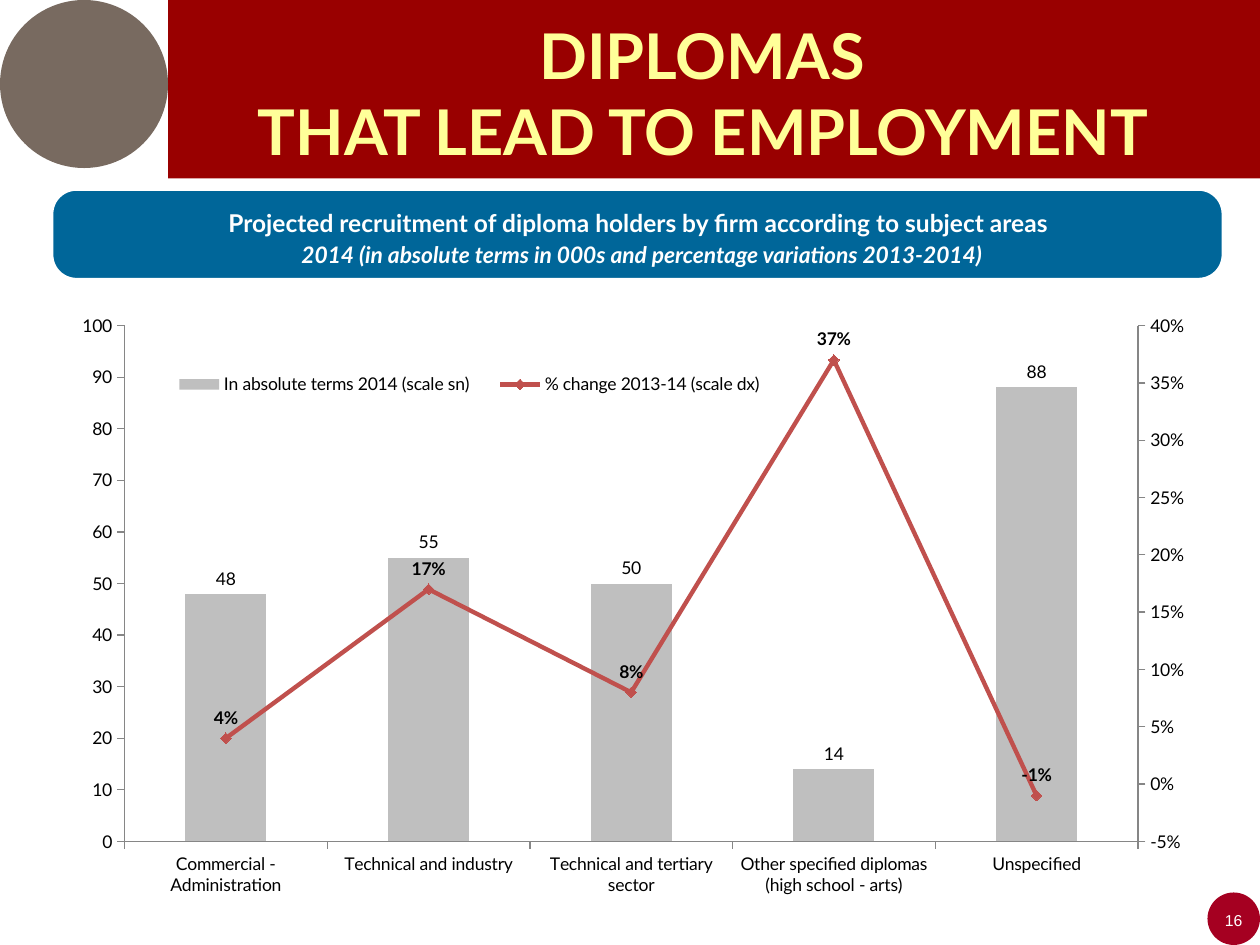
from copy import deepcopy

from pptx import Presentation
from pptx.chart.data import CategoryChartData
from pptx.dml.color import RGBColor
from pptx.enum.chart import XL_CHART_TYPE as ChartType
from pptx.enum.chart import XL_LABEL_POSITION as LabelPosition
from pptx.enum.chart import XL_LEGEND_POSITION as LegendPosition
from pptx.enum.chart import XL_MARKER_STYLE as MarkerStyle
from pptx.enum.chart import XL_TICK_MARK as TickMark
from pptx.enum.shapes import MSO_SHAPE as Shape
from pptx.enum.text import MSO_ANCHOR as Anchor
from pptx.enum.text import MSO_AUTO_SIZE as AutoSize
from pptx.enum.text import PP_ALIGN as Align
from pptx.oxml import parse_xml
from pptx.oxml.ns import nsdecls
from pptx.util import Pt

FONT = "Lato"
GREY, RED, AXIS = "BFBFBF", "C0504D", "868686"

LINE_PLOT = """<c:lineChart {ns}><c:grouping val="standard"/><c:varyColors val="0"/>
<c:marker val="1"/><c:axId val="5001"/><c:axId val="5002"/></c:lineChart>"""

HIDDEN_AXIS = """<c:catAx {ns}><c:axId val="5001"/>
<c:scaling><c:orientation val="minMax"/></c:scaling><c:delete val="1"/>
<c:axPos val="b"/><c:crossAx val="5002"/><c:crosses val="autoZero"/></c:catAx>"""

RIGHT_AXIS = """<c:valAx {ns}><c:axId val="5002"/>
<c:scaling><c:orientation val="minMax"/><c:max val="0.4"/><c:min val="-0.05"/></c:scaling>
<c:delete val="0"/><c:axPos val="r"/><c:numFmt formatCode="0%" sourceLinked="0"/>
<c:majorTickMark val="out"/><c:minorTickMark val="none"/><c:tickLblPos val="nextTo"/>
<c:spPr><a:ln w="9525"><a:solidFill><a:srgbClr val="{color}"/></a:solidFill></a:ln></c:spPr>
<c:crossAx val="5001"/><c:crosses val="max"/><c:crossBetween val="between"/>
<c:majorUnit val="0.05"/></c:valAx>"""

LAYOUT = """<c:layout {ns}><c:manualLayout>{target}<c:xMode val="edge"/><c:yMode val="edge"/>
<c:x val="{x}"/><c:y val="{y}"/><c:w val="{w}"/><c:h val="{h}"/></c:manualLayout></c:layout>"""


def rgb(value):
    return RGBColor.from_string(value)


def chart_xml(template, **values):
    return parse_xml(template.format(ns=nsdecls("c", "a"), **values))


def place(item, left, top, width, height):
    item.left, item.top = Pt(left), Pt(top)
    item.width, item.height = Pt(width), Pt(height)


def format_font(font, size, color="000000", name=FONT, bold=False, italic=False):
    font.size, font.name = Pt(size), name
    font.bold, font.italic = bold, italic
    font.color.rgb = rgb(color)


def write(para, text, spacing=None, after=None, **style):
    para.text = text
    para.alignment = Align.CENTER
    para.line_spacing = spacing
    if after is not None:
        para.space_after = Pt(after)
    for span in para.runs:
        format_font(span.font, **style)


def set_frame(box, side=0, vertical=0):
    frame = box.text_frame
    frame.word_wrap = True
    frame.vertical_anchor = Anchor.MIDDLE
    frame.margin_left = frame.margin_right = Pt(side)
    frame.margin_top = frame.margin_bottom = Pt(vertical)
    return frame


def add_block(shapes, kind, bounds, fill, line=None):
    block = shapes.add_shape(kind, *map(Pt, bounds))
    block.shadow.inherit = False
    block.fill.solid()
    block.fill.fore_color.rgb = rgb(fill)
    if line:
        block.line.color.rgb = rgb(line)
        block.line.width = Pt(2)
    else:
        block.line.fill.background()
    return block


def add_title(page):
    title = page.shapes.title
    place(title, 98, 5.8, 615, 93.6)
    frame = set_frame(title, 6.5, 3.6)
    frame.auto_size = AutoSize.SHAPE_TO_FIT_TEXT
    para = frame.paragraphs[0]
    write(para, "DIPLOMAS \vTHAT LEAD TO EMPLOYMENT ", size=36, color="FFFF99", bold=True)
    line_break = para._p.xpath("a:br")[0]
    line_break.append(deepcopy(para.runs[0].font._element))


def add_banner(page):
    group = page.shapes.add_group_shape()
    plate = add_block(group.shapes, Shape.ROUNDED_RECTANGLE, (29.5, 108, 669.6, 51.8), "006699", "FFFFFF")
    plate.adjustments[0] = 0.275
    box = group.shapes.add_textbox(*map(Pt, (32.4, 105.8, 668.2, 62.6)))
    frame = set_frame(box, 2.9, 12.2)
    style = dict(spacing=0.9, after=3, color="FFFFFF", bold=True)
    write(frame.paragraphs[0],
          "Projected recruitment of diploma holders by firm according to subject areas ", size=14, **style)
    write(frame.add_paragraph(),
          "2014 (in absolute terms in 000s and percentage variations 2013-2014)", size=13, italic=True, **style)


def add_page_number(page):
    add_block(page.shapes, Shape.OVAL, (690, 510, 30, 30), "A50021")
    box = page.shapes.add_textbox(*map(Pt, (690, 512, 30, 28)))
    write(set_frame(box).paragraphs[0], "16", size=9, color="FFFFFF", name="Arial")


def format_axis(axis):
    axis.has_major_gridlines = False
    axis.major_tick_mark = TickMark.OUTSIDE
    axis.format.line.color.rgb = rgb(AXIS)
    axis.format.line.width = Pt(0.75)


def add_labels(series, position, number_format, bold=False):
    labels = series.data_labels
    labels.show_value = True
    labels.position = position
    labels.number_format = number_format
    labels.number_format_is_linked = False
    format_font(labels.font, 10, bold=bold)


def move_to_right_axis(chart):
    plot_area = chart.element.xpath(".//c:plotArea")[0]
    bars = plot_area.xpath("c:barChart")[0]
    change = bars.xpath("c:ser")[1]
    for flag in change.xpath("c:invertIfNegative"):
        change.remove(flag)
    line_plot = chart_xml(LINE_PLOT)
    line_plot.insert(2, change)
    bars.addnext(line_plot)
    last_axis = plot_area.xpath("c:valAx")[0]
    last_axis.addnext(chart_xml(HIDDEN_AXIS))
    plot_area.xpath("c:catAx")[-1].addnext(chart_xml(RIGHT_AXIS, color=AXIS))


def set_layouts(chart):
    plot_area = chart.element.xpath(".//c:plotArea")[0]
    for old in plot_area.xpath("c:layout"):
        plot_area.remove(old)
    inner = '<c:layoutTarget val="inner"/>'
    plot_area.insert(0, chart_xml(LAYOUT, target=inner, x=0.075, y=0.051, w=0.852, h=0.824))
    legend = chart.element.xpath(".//c:legend")[0]
    for old in legend.xpath("c:layout"):
        legend.remove(old)
    legend.xpath("c:legendPos")[0].addnext(chart_xml(LAYOUT, target="", x=0.1, y=0.12, w=0.53, h=0.05))


def add_diploma_chart(page):
    data = CategoryChartData()
    data.categories = ["Commercial - Administration", "Technical and industry",
                       "Technical and tertiary sector",
                       "Other specified diplomas (high school - arts)", "Unspecified"]
    data.add_series("In absolute terms 2014 (scale sn)", (48, 55, 50, 14, 88))
    data.add_series("% change 2013-14 (scale dx)", (0.04, 0.17, 0.08, 0.37, -0.01), "0%")
    bounds = map(Pt, (20.2, 167.8, 679.7, 357.8))
    chart = page.shapes.add_chart(ChartType.COLUMN_CLUSTERED, *bounds, data).chart
    chart.has_title = False
    format_font(chart.font, 10)
    chart.has_legend = True
    chart.legend.position = LegendPosition.RIGHT
    chart.legend.include_in_layout = False
    format_axis(chart.category_axis)
    format_axis(chart.value_axis)
    chart.value_axis.minimum_scale, chart.value_axis.maximum_scale = 0, 100
    chart.value_axis.major_unit = 10
    move_to_right_axis(chart)
    set_layouts(chart)

    bar_plot, line_plot = chart.plots
    bar_plot.gap_width = 150
    bar_plot.vary_by_categories = False
    totals, change = bar_plot.series[0], line_plot.series[0]
    totals.format.fill.solid()
    totals.format.fill.fore_color.rgb = rgb(GREY)
    add_labels(totals, LabelPosition.OUTSIDE_END, "#,##0")
    change.smooth = False
    change.format.line.color.rgb = rgb(RED)
    change.format.line.width = Pt(2.5)
    change.marker.style = MarkerStyle.DIAMOND
    change.marker.size = 6
    change.marker.format.fill.solid()
    change.marker.format.fill.fore_color.rgb = rgb(RED)
    change.marker.format.line.color.rgb = rgb(RED)
    add_labels(change, LabelPosition.ABOVE, "0%", bold=True)


def main():
    deck = Presentation()
    deck.slide_width, deck.slide_height = Pt(720), Pt(540)
    page = deck.slides.add_slide(deck.slide_layouts[5])
    header = add_block(page.shapes, Shape.RECTANGLE, (96, 0, 624, 102), "990000")
    page.shapes.title._element.addprevious(header._element)
    add_block(page.shapes, Shape.OVAL, (0, 0, 96, 96), "786A60")
    add_page_number(page)
    add_title(page)
    add_banner(page)
    add_diploma_chart(page)
    deck.save("out.pptx")


if __name__ == "__main__":
    main()
